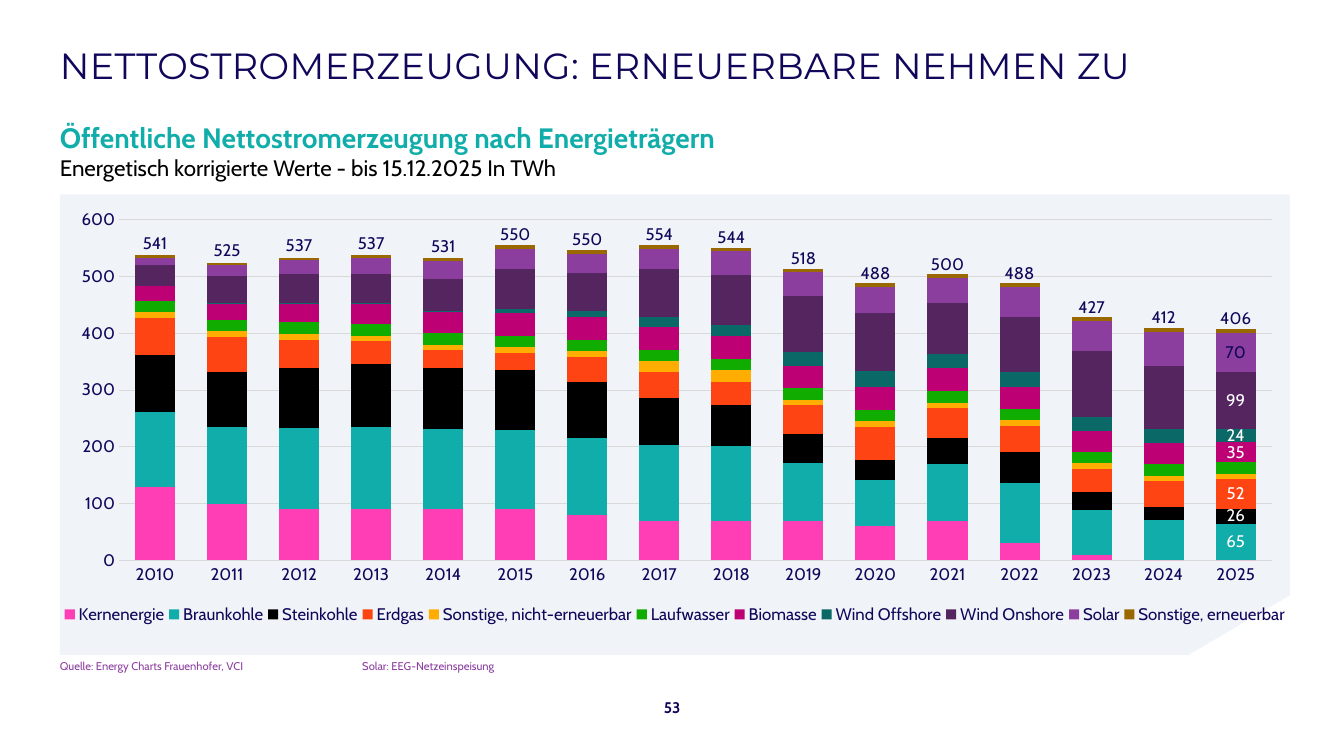
import pptx
import pptx.chart.data
import pptx.dml.color
import pptx.enum.chart
import pptx.enum.text
import pptx.oxml
import pptx.oxml.ns
import pptx.util

Cm, Pt = pptx.util.Cm, pptx.util.Pt
XL = pptx.enum.chart
ANCHOR, ALIGN = pptx.enum.text.MSO_ANCHOR, pptx.enum.text.PP_ALIGN

COLORS = {
    "navy": "10065A", "teal": "10ADAA", "purple": "8C3E9F", "black": "000000",
    "white": "FFFFFF", "panel": "F0F3F7", "grid": "D9D9D9",
    "pink": "FF3EB5", "orange": "FF4414", "amber": "FFAD00", "green": "10AD00",
    "magenta": "BE0075", "petrol": "0A6866", "plum": "54255F", "ochre": "996800",
}
BODY, HEAD = "Cabin", "Montserrat"
YEARS = [str(year) for year in range(2010, 2026)]
TOTALS = [541, 525, 537, 537, 531, 550, 550, 554, 544, 518, 488, 500, 488, 427, 412, 406]
SERIES = [
    ("Kernenergie", "pink", None,
     [130, 100, 90, 90, 90, 90, 80, 70, 70, 70, 60, 70, 30, 10, 0, 0]),
    ("Braunkohle", "teal", "white",
     [131, 135, 143, 145, 141, 140, 135, 134, 132, 102, 82, 99, 106, 78, 71, 65]),
    ("Steinkohle", "black", "white",
     [100, 96, 106, 111, 108, 106, 100, 82, 72, 50, 35, 47, 55, 33, 24, 26]),
    ("Erdgas", "orange", "white",
     [66, 63, 50, 40, 31, 29, 43, 45, 41, 51, 58, 52, 46, 40, 44, 52]),
    ("Sonstige, nicht-erneuerbar", "amber", None,
     [10, 10, 10, 10, 10, 10, 10, 20, 20, 10, 10, 10, 10, 10, 10, 10]),
    ("Laufwasser", "green", None, [20] * len(YEARS)),
    ("Biomasse", "magenta", "white",
     [26, 28, 34, 36, 38, 40, 40, 40, 40, 40, 41, 41, 39, 37, 37, 35]),
    ("Wind Offshore", "petrol", "white",
     [0, 1, 1, 1, 1, 8, 12, 17, 19, 24, 27, 24, 25, 24, 26, 24]),
    ("Wind Onshore", "plum", "white",
     [38, 48, 50, 51, 56, 71, 66, 86, 89, 99, 103, 90, 97, 116, 111, 99]),
    ("Solar", "purple", "navy",
     [12, 19, 25, 29, 33, 35, 34, 35, 41, 41, 45, 44, 53, 53, 59, 70]),
    ("Sonstige, erneuerbar", "ochre", None,
     [4, 4, 4, 4, 5, 6, 6, 6, 6, 7, 7, 7, 7, 7, 7, 6]),
]


def rgb(name):
    """Return the named colour."""
    return pptx.dml.color.RGBColor.from_string(COLORS[name])


def style_font(font, size, color, bold=False, face=BODY):
    """Set size, colour, weight and typeface."""
    font.size, font.bold, font.name = Pt(size), bold, face
    font.color.rgb = rgb(color)


def add_text(s, box, text, size, color, bold=False, face=BODY,
             align=ALIGN.LEFT, anchor=ANCHOR.TOP):
    """Place one line of text in a box and return its paragraph and run."""
    tf = s.shapes.add_textbox(*map(Cm, box)).text_frame
    tf.word_wrap, tf.vertical_anchor = True, anchor
    tf.margin_left = tf.margin_top = tf.margin_right = tf.margin_bottom = 0
    p = tf.paragraphs[0]
    p.alignment = align
    r = p.add_run()
    r.text = text
    style_font(r.font, size, color, bold, face)
    return p, r


def add_header(s, left, top, width):
    """Write the title and the two heading lines above the chart."""
    _, r = add_text(s, (left, top, width, 2.49),
                    "NETTOSTROMERZEUGUNG: ERNEUERBARE NEHMEN ZU",
                    26, "navy", face=HEAD, anchor=ANCHOR.MIDDLE)
    r.font._element.set("spc", "30")
    add_text(s, (left, top + 2.66, width, 0.79),
             "Öffentliche Nettostromerzeugung nach Energieträgern", 20, "teal", bold=True)
    add_text(s, (left, top + 3.51, width, 0.71),
             "Energetisch korrigierte Werte - bis 15.12.2025 In TWh", 16, "black")


def add_panel(s, left, top, width, height):
    """Draw the pale panel with its lower right corner cut off."""
    right, bottom = left + width, top + height
    corners = [(right, top), (right, bottom - 1.5), (right - 2.55, bottom), (left, bottom)]
    fb = s.shapes.build_freeform(Cm(left), Cm(top))
    fb.add_line_segments([(Cm(x), Cm(y)) for x, y in corners], close=True)
    sp = fb.convert_to_shape()
    sp.shadow.inherit = False
    sp.fill.solid()
    sp.fill.fore_color.rgb = rgb("panel")
    sp.line.fill.background()


def set_layout(parent, index, x, y, w, h, inner=False):
    """Give a plot area or legend a fixed place within the chart."""
    for old in parent.findall(pptx.oxml.ns.qn("c:layout")):
        parent.remove(old)
    target = '<c:layoutTarget val="inner"/>' if inner else ""
    sizes = "".join(f'<c:{key} val="{val}"/>' for key, val in zip("xywh", (x, y, w, h)))
    parent.insert(index, pptx.oxml.parse_xml(
        f'<c:layout {pptx.oxml.ns.nsdecls("c")}><c:manualLayout>{target}'
        f'<c:xMode val="edge"/><c:yMode val="edge"/>{sizes}</c:manualLayout></c:layout>'))


def style_axes(chart):
    """Format the category and value axes."""
    years, twh = chart.category_axis, chart.value_axis
    for axis in (years, twh):
        axis.major_tick_mark = axis.minor_tick_mark = XL.XL_TICK_MARK.NONE
        style_font(axis.tick_labels.font, 12, "navy")
    years.has_major_gridlines = False
    twh.minimum_scale, twh.maximum_scale, twh.major_unit = 0, 600, 100
    twh.tick_labels.number_format = "0"
    twh.tick_labels.number_format_is_linked = False
    twh.format.line.fill.background()
    for line in (years.format.line, twh.major_gridlines.format.line):
        line.color.rgb, line.width = rgb("grid"), Pt(0.75)


def label_series(plot):
    """Label the last column's segments and put the totals above all columns."""
    for ser, (_, color, label_color, _) in zip(plot.series, SERIES):
        ser.format.fill.solid()
        ser.format.fill.fore_color.rgb = rgb(color)
        ser.invert_if_negative = False
        if label_color:
            label = ser.points[len(YEARS) - 1].data_label
            style_font(label.font, 12, label_color)
            label.position = XL.XL_LABEL_POSITION.CENTER
    for i, total in enumerate(TOTALS):
        label = plot.series[-1].points[i].data_label
        r = label.text_frame.paragraphs[0].add_run()
        r.text = str(total)
        style_font(r.font, 12, "navy")
        label.position = XL.XL_LABEL_POSITION.INSIDE_BASE


def add_energy_chart(s, left, top, width, height):
    """Add the stacked column chart of generation by energy source."""
    data = pptx.chart.data.CategoryChartData(number_format="0")
    data.categories = YEARS
    for name, _, _, values in SERIES:
        data.add_series(name, values)
    chart = s.shapes.add_chart(XL.XL_CHART_TYPE.COLUMN_STACKED,
                               *map(Cm, (left, top, width, height)), data).chart
    style_font(chart.font, 12, "navy")
    chart.has_title = False
    plot = chart.plots[0]
    plot.gap_width, plot.overlap, plot.vary_by_categories = 80, 100, False
    style_axes(chart)
    label_series(plot)
    chart.has_legend = True
    chart.legend.position = XL.XL_LEGEND_POSITION.BOTTOM
    chart.legend.include_in_layout = False
    style_font(chart.legend.font, 12, "navy")
    set_layout(chart.legend._element, 1, 0, 9.89 / height, 1, 0.07)
    set_layout(chart._chartSpace.chart.plotArea, 0, 1.49 / width, 0.03,
               29.05 / width, 8.59 / height, inner=True)


def add_footer(s, left, top, width):
    """Write the source line and the page number."""
    p, _ = add_text(s, (left, top, width, 0.33),
                    "Quelle: Energy Charts Frauenhofer, VCI\tSolar: EEG-Netzeinspeisung",
                    8, "purple")
    p._p.get_or_add_pPr().append(pptx.oxml.parse_xml(
        f'<a:tabLst {pptx.oxml.ns.nsdecls("a")}><a:tab pos="{Cm(7.62)}" algn="l"/></a:tabLst>'))
    add_text(s, (left + width / 2 - 0.82, top + 0.87, 1.5, 0.71), "53", 11, "navy",
             bold=True, align=ALIGN.CENTER, anchor=ANCHOR.MIDDLE)


def main():
    """Build and save the slide."""
    prs = pptx.Presentation()
    prs.slide_width, prs.slide_height = Cm(33.87), Cm(19.05)
    s = prs.slides.add_slide(prs.slide_layouts[6])
    left, width = 1.51, 31
    add_panel(s, left, 4.9, width, 11.6)
    add_header(s, left, 0.38, width)
    add_energy_chart(s, left, 5.2, width, 11.2)
    add_footer(s, left, 16.61, width)
    prs.save("out.pptx")


if __name__ == "__main__":
    main()
